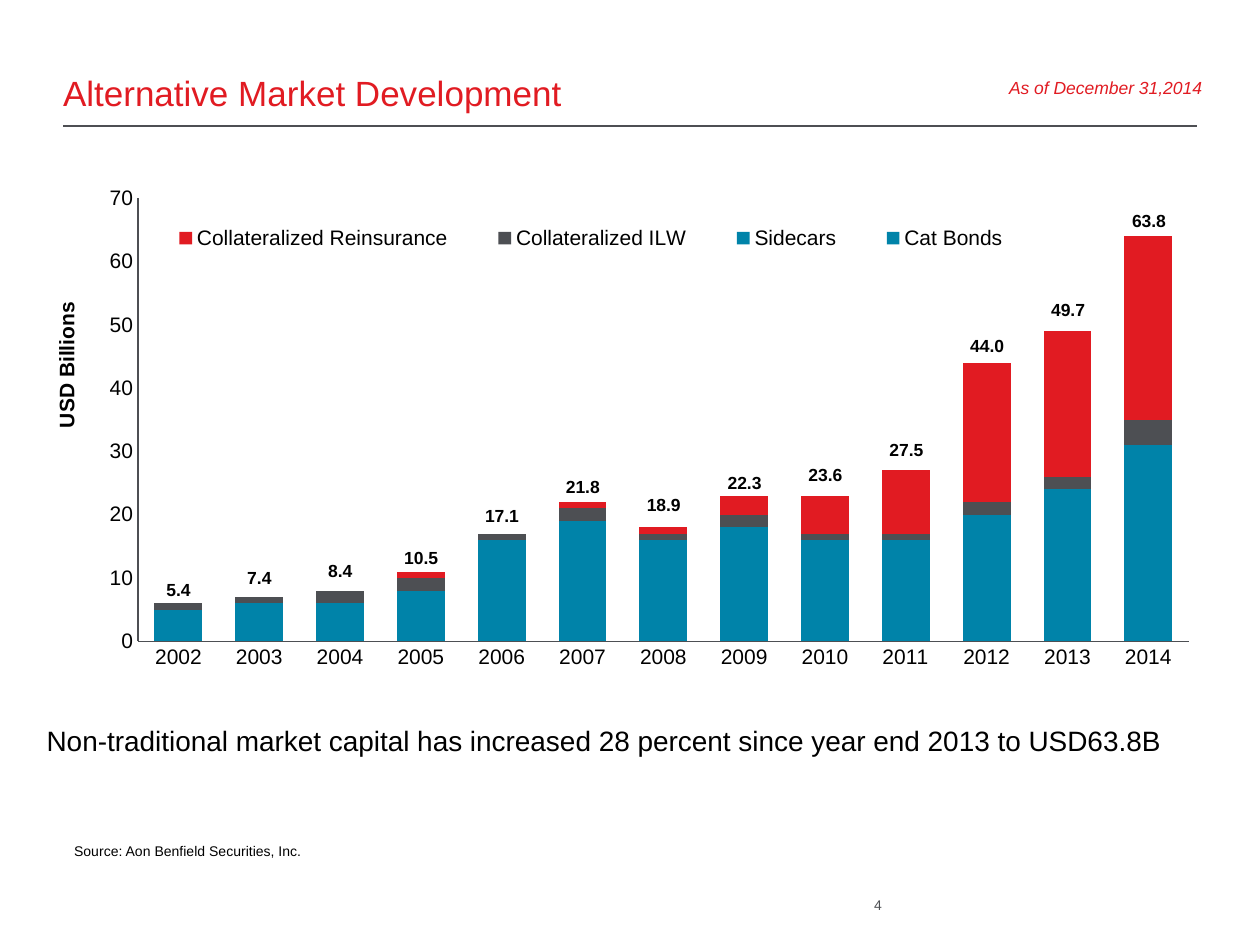
import pptx
import pptx.chart.data
import pptx.dml.color
import pptx.enum.chart
import pptx.enum.shapes
import pptx.enum.text
import pptx.oxml
import pptx.oxml.ns
import pptx.util
from lxml import etree

In, Pt = pptx.util.Inches, pptx.util.Pt
ANCHOR = pptx.enum.text.MSO_ANCHOR
ALIGN = pptx.enum.text.PP_ALIGN
RED, GREY, BLUE, BLACK = "E11B22", "4D4F53", "0083A9", "000000"

TITLE = "Alternative Market Development"
MESSAGE = "Non-traditional market capital has increased 28 percent since year end 2013 to USD63.8B"
YEARS = [str(y) for y in range(2002, 2015)]
SERIES = [
    ("Cat Bonds", BLUE, [3, 4, 4, 6, 10, 16, 14, 15, 14, 14, 17, 20, 24]),
    ("Sidecars", BLUE, [2, 2, 2, 2, 6, 3, 2, 3, 2, 2, 3, 4, 7]),
    ("Collateralized ILW", GREY, [1, 1, 2, 2, 1, 2, 1, 2, 1, 1, 2, 2, 4]),
    ("Collateralized Reinsurance", RED, [0, 0, 0, 1, 0, 1, 1, 3, 6, 10, 22, 23, 29]),
]
TOTALS = [5.4, 7.4, 8.4, 10.5, 17.1, 21.8, 18.9, 22.3, 23.6, 27.5, 44.0, 49.7, 63.8]
AXIS_MAX = 70
CHART = (0.73, 1.45, 8.71, 4)
PLOT = (0.042, 0.031, 0.958, 0.879)
LEGEND = (0.04, 0.07, 0.83, 0.08)
NOTES = [
    ((-0.08, 2.74, 1.21, 0.3), "USD Billions", dict(size=Pt(12), bold=True), dict(word_wrap=False), 270),
    ((7.91, 0.56, 1.78, 0.27), "As of December 31,2014", dict(size=Pt(10), italic=True, color=RED),
     dict(word_wrap=False), 0),
    ((0.49, 6.64, 4.36, 0.24), "Source: Aon Benfield Securities, Inc.", dict(size=Pt(8)), {}, 0),
]
NO_INSETS = dict(margin_left=0, margin_right=0, margin_top=0, margin_bottom=0)


def rgb(value):
    return pptx.dml.color.RGBColor.from_string(value)


def set_font(font, color=BLACK, **values):
    for key, value in dict(name="Arial", **values).items():
        setattr(font, key, value)
    font.color.rgb = rgb(color)


def fill_text(s, text, font, frame, align=ALIGN.LEFT):
    tf = s.text_frame
    for key, value in dict(dict(word_wrap=True, auto_size=pptx.enum.text.MSO_AUTO_SIZE.NONE), **frame).items():
        setattr(tf, key, value)
    p = tf.paragraphs[0]
    p.alignment = align
    p.space_before = Pt(0)
    r = p.add_run()
    r.text = text
    set_font(r.font, **font)
    return p


def place(s, box):
    s.left, s.top, s.width, s.height = map(In, box)


def add_text(slide, box, text, font, frame, align=ALIGN.LEFT):
    s = slide.shapes.add_textbox(*map(In, box))
    fill_text(s, text, font, frame, align)
    return s


def set_line(line):
    line.color.rgb = rgb(GREY)
    line.width = Pt(0.75)


def manual_layout(parent, box, successors, inner=False):
    for old in parent.findall(pptx.oxml.ns.qn("c:layout")):
        parent.remove(old)
    target = '<c:layoutTarget val="inner"/>' if inner else ""
    modes = "".join(f'<c:{k}Mode val="edge"/>' for k in "xy")
    sizes = "".join(f'<c:{k} val="{v}"/>' for k, v in zip("xywh", box))
    layout = pptx.oxml.parse_xml(
        f'<c:layout {pptx.oxml.ns.nsdecls("c")}><c:manualLayout>{target}{modes}{sizes}'
        "</c:manualLayout></c:layout>")
    tags = [pptx.oxml.ns.qn(t) for t in successors]
    index = next((i for i, child in enumerate(parent) if child.tag in tags), len(parent))
    parent.insert(index, layout)


def add_capital_chart(slide):
    data = pptx.chart.data.CategoryChartData(number_format="0")
    data.categories = YEARS
    for name, _, values in SERIES:
        data.add_series(name, values)
    kind = pptx.enum.chart.XL_CHART_TYPE.COLUMN_STACKED
    chart = slide.shapes.add_chart(kind, *map(In, CHART), data).chart
    set_font(chart.font, size=Pt(10))
    chart.has_title = False
    plot = chart.plots[0]
    plot.gap_width, plot.overlap, plot.vary_by_categories = 69, 100, False
    for series, (_, color, _) in zip(plot.series, SERIES):
        series.format.fill.solid()
        series.format.fill.fore_color.rgb = rgb(color)
    for axis in (chart.category_axis, chart.value_axis):
        axis.has_major_gridlines = False
        axis.major_tick_mark = axis.minor_tick_mark = pptx.enum.chart.XL_TICK_MARK.NONE
        set_font(axis.tick_labels.font, size=Pt(12))
        set_line(axis.format.line)
    value = chart.value_axis
    value.minimum_scale, value.maximum_scale, value.major_unit = 0, AXIS_MAX, 10
    value.tick_labels.number_format = "#,##0"
    value.tick_labels.number_format_is_linked = False
    chart.has_legend = True
    legend = chart.legend
    legend.position = pptx.enum.chart.XL_LEGEND_POSITION.LEFT
    legend.include_in_layout = False
    set_font(legend.font, size=Pt(12))
    manual_layout(legend._element, LEGEND, ("c:overlay", "c:spPr", "c:txPr"))
    manual_layout(plot._element.getparent(), PLOT, ("c:barChart",), inner=True)


def add_totals(slide):
    left, top, width, height = CHART
    x0, step = left + width * PLOT[0], width * PLOT[2] / len(YEARS)
    base, unit = top + height * (PLOT[1] + PLOT[3]), height * PLOT[3] / AXIS_MAX
    label_w, label_h = 0.47, 0.27
    for i, total in enumerate(TOTALS):
        box = (x0 + step * (i + 0.5) - label_w / 2, base - unit * total - label_h, label_w, label_h)
        add_text(slide, box, f"{total:.1f}", dict(size=Pt(10), bold=True), {}, ALIGN.CENTER)


def main():
    prs = pptx.Presentation()
    prs.slide_width, prs.slide_height = In(10), In(7.5)
    slide = prs.slides.add_slide(prs.slide_layouts[1])
    title, body = slide.placeholders
    place(title, (0.5, 0.33, 9, 0.57))
    fill_text(title, TITLE, dict(size=Pt(20), color=RED), dict(NO_INSETS, vertical_anchor=ANCHOR.BOTTOM))
    place(body, (0.37, 5.74, 9.33, 1.58))
    pPr = fill_text(body, MESSAGE, dict(size=Pt(16)), NO_INSETS)._p.get_or_add_pPr()
    pPr.set("marL", "0")
    pPr.set("indent", "0")
    etree.SubElement(pPr, pptx.oxml.ns.qn("a:buNone"))

    rule = slide.shapes.add_connector(pptx.enum.shapes.MSO_CONNECTOR.STRAIGHT, In(0.5), In(1), In(9.5), In(1))
    set_line(rule.line)
    etree.SubElement(rule._element.spPr, pptx.oxml.ns.qn("a:effectLst"))

    add_capital_chart(slide)
    add_totals(slide)
    for box, text, font, frame, rotation in NOTES:
        add_text(slide, box, text, font, frame).rotation = rotation
    add_text(slide, (6.68, 6.92, 0.32, 0.33), "4", dict(size=Pt(8), color=GREY),
             dict(NO_INSETS, vertical_anchor=ANCHOR.BOTTOM), ALIGN.RIGHT)
    prs.save("out.pptx")


if __name__ == "__main__":
    main()
